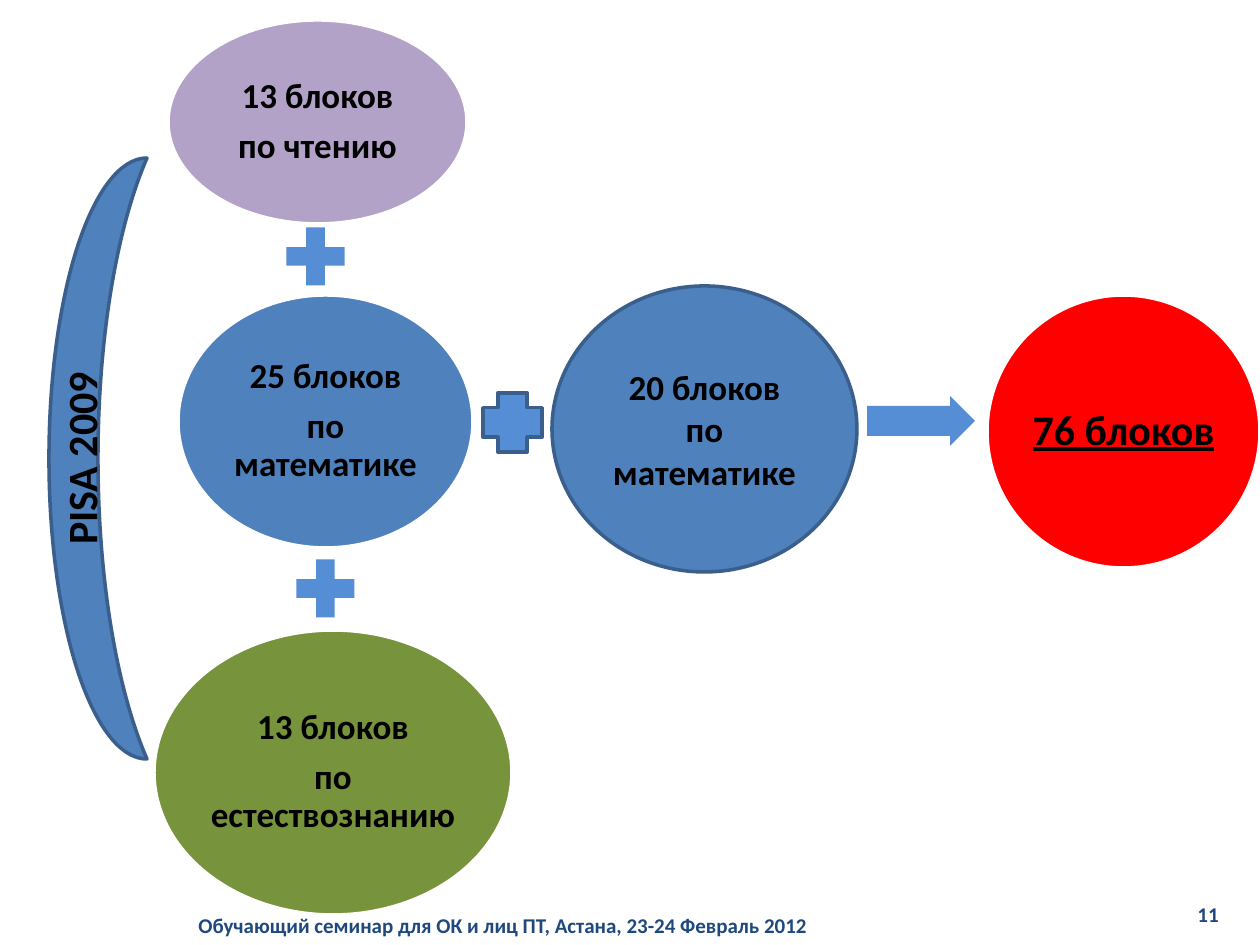
import pptx
import pptx.util
from dataclasses import dataclass
from pptx.dml.color import RGBColor
from pptx.enum.shapes import MSO_SHAPE
from pptx.enum.text import MSO_ANCHOR, PP_ALIGN

SCALE = 914400 / 126


def px(n):
    return pptx.util.Emu(round(n * SCALE))


@dataclass(frozen=True)
class Theme:
    font: str = "Calibri"
    ink: str = "000000"
    navy: str = "1F497D"
    white: str = "FFFFFF"
    lilac: str = "B3A2C7"
    blue: str = "4F81BD"
    sky: str = "558ED5"
    edge: str = "3A5F8C"
    green: str = "77933C"
    red: str = "FF0000"
    small: int = 12
    label: int = 20
    large: int = 24
    line: int = 2


class Board:
    def __init__(self, slide, theme):
        self.slide = slide
        self.theme = theme

    def style(self, frame, lines, size, color, align, under=None):
        frame.word_wrap = True
        frame.text = "\n".join(lines)
        for para in frame.paragraphs:
            para.alignment = align
            for run in para.runs:
                font = run.font
                font.name = self.theme.font
                font.size = pptx.util.Pt(size)
                font.bold = True
                font.underline = under
                font.color.rgb = RGBColor.from_string(color)

    def shape(self, kind, box, fill, edge=None):
        item = self.slide.shapes.add_shape(kind, *map(px, box))
        item.shadow.inherit = False
        item.fill.solid()
        item.fill.fore_color.rgb = RGBColor.from_string(fill)
        if edge:
            item.line.color.rgb = RGBColor.from_string(edge)
            item.line.width = pptx.util.Pt(self.theme.line)
        else:
            item.line.fill.background()
        return item

    def label(self, item, lines, size, under=None):
        frame = item.text_frame
        frame.vertical_anchor = MSO_ANCHOR.MIDDLE
        frame.margin_left = frame.margin_right = px(2)
        frame.margin_top = frame.margin_bottom = px(2)
        self.style(frame, lines, size, self.theme.ink, PP_ALIGN.CENTER, under)

    def oval(self, box, fill, edge, lines, size, under=None):
        item = self.shape(MSO_SHAPE.OVAL, box, fill, edge)
        self.label(item, lines, size, under)
        return item

    def node(self, box, fill, lines, size, under=None):
        """A white-edged oval with tight, spaced lines."""
        item = self.oval(box, fill, self.theme.white, lines, size, under)
        for para in item.text_frame.paragraphs:
            para.line_spacing = 0.9
            para.space_after = pptx.util.Pt(round(size * 0.35))

    def arc(self, box, text):
        theme = self.theme
        item = self.shape(MSO_SHAPE.MOON, box, theme.blue, theme.edge)
        self.label(item, [text], theme.large)
        item.text_frame._txBody.bodyPr.set("vert", "vert270")

    def note(self, box, text, align, anchor):
        frame = self.slide.shapes.add_textbox(*map(px, box)).text_frame
        frame.vertical_anchor = anchor
        self.style(frame, [text], self.theme.small, self.theme.navy, align)


def main():
    deck = pptx.Presentation()
    deck.slide_width, deck.slide_height = px(1260), px(945)
    theme = Theme()
    board = Board(deck.slides.add_slide(deck.slide_layouts[6]), theme)

    # Footer and slide number
    board.note((186, 905, 876, 40),
               "Обучающий семинар для ОК и лиц ПТ, Астана, 23-24 Февраль 2012",
               PP_ALIGN.LEFT, MSO_ANCHOR.MIDDLE)
    board.note((1113, 895, 118, 40), "11", PP_ALIGN.RIGHT, MSO_ANCHOR.TOP)

    # Column of subjects, joined by plus signs
    subjects = [
        ((168, 20, 299, 204), theme.lilac, ["13 блоков", "по чтению"]),
        ((178, 295, 295, 253), theme.blue, ["25 блоков", "по математике"]),
        ((154, 630, 358, 285), theme.green, ["13 блоков", "по естествознанию"]),
    ]
    for box, fill, lines in subjects:
        board.node(box, fill, lines, theme.label)
    for left, top in [(276, 217), (286, 549)]:
        board.shape(MSO_SHAPE.MATH_PLUS, (left, top, 79, 79), theme.sky)

    # Arrow to the total
    arrow = board.shape(MSO_SHAPE.RIGHT_ARROW, (867, 396, 108, 50), theme.sky)
    arrow.adjustments[0] = 0.6
    arrow.adjustments[1] = 0.5
    board.node((987, 295, 273, 273), theme.red, ["76 блоков"], theme.large, True)

    # Added mathematics blocks
    board.oval((552, 286, 305, 286), theme.blue, theme.edge,
               ["20 блоков", "по математике"], theme.label)
    board.shape(MSO_SHAPE.CROSS, (483, 393, 59, 59), theme.sky, theme.edge)

    # Arc that spans the subjects
    board.arc((49, 158, 98, 601), "PISA 2009")

    deck.save("out.pptx")


if __name__ == "__main__":
    main()
